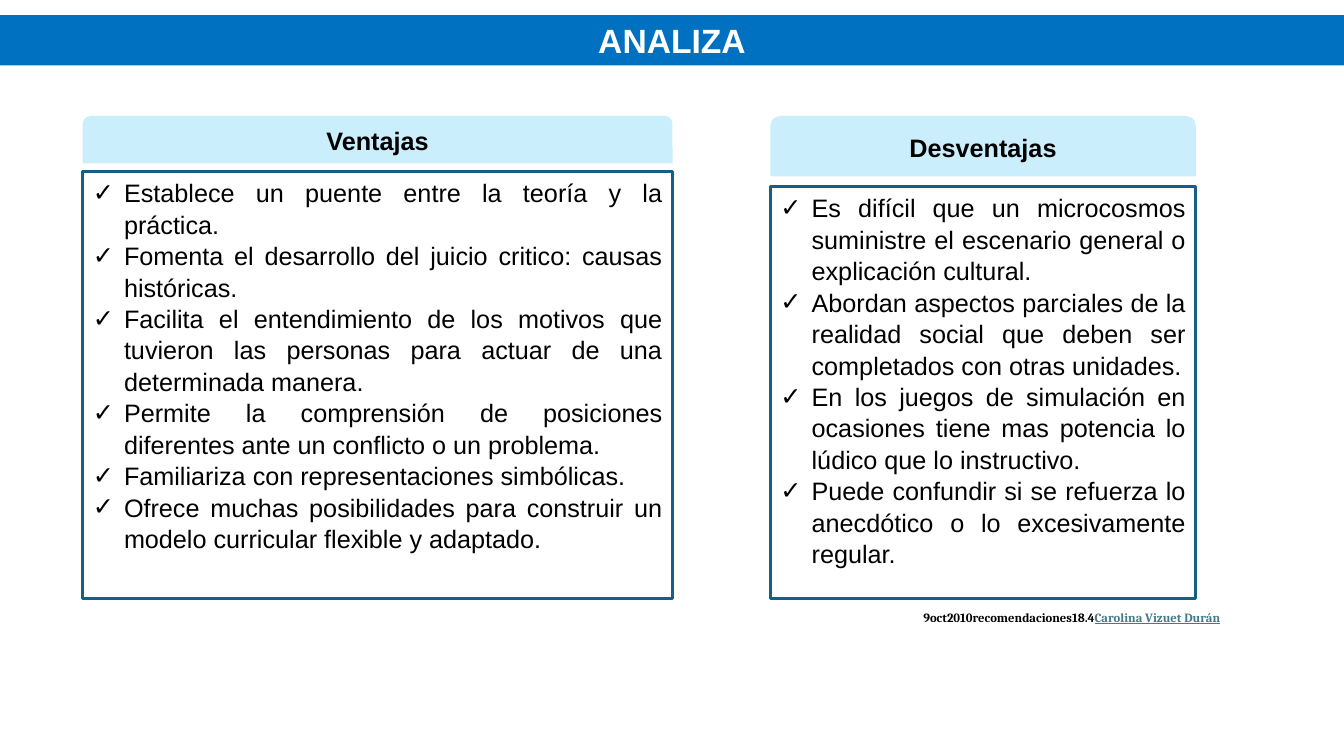
from dataclasses import dataclass

from lxml import etree
from pptx import Presentation
from pptx import util as u
from pptx.dml.color import RGBColor
from pptx.enum import shapes, text
from pptx.oxml.ns import qn


@dataclass(frozen=True)
class Theme:
    banner: RGBColor = RGBColor(0x00, 0x70, 0xC0)
    heading: RGBColor = RGBColor(0xCA, 0xEE, 0xFB)
    border: RGBColor = RGBColor(0x15, 0x60, 0x82)
    link: RGBColor = RGBColor(0x46, 0x78, 0x86)
    ink: RGBColor = RGBColor(0, 0, 0)
    white: RGBColor = RGBColor(0xFF, 0xFF, 0xFF)
    sans: str = "Arial"
    serif: str = "Cambria"
    title_size: float = 24
    body_size: float = 18
    credit_size: float = 9
    border_width: float = 2.25
    line_spacing: float = 1.04


@dataclass(frozen=True)
class Column:
    heading: str
    points: tuple[str, ...]
    left: float
    width: float
    heading_height: float
    list_top: float


THEME = Theme()
HEADING_TOP = 1.15
LIST_BOTTOM = 5.94
INDENT = 0.31

COLUMNS = (
    Column("Ventajas", (
        "Establece un puente entre la teoría y la práctica.",
        "Fomenta el desarrollo del juicio critico: causas históricas.",
        "Facilita el entendimiento de los motivos que tuvieron las personas para actuar de una determinada manera.",
        "Permite la comprensión de posiciones diferentes ante un conflicto o un problema.",
        "Familiariza con representaciones simbólicas.",
        "Ofrece muchas posibilidades para construir un modelo curricular flexible y adaptado.",
    ), 0.82, 5.85, 0.47, 1.7),
    Column("Desventajas", (
        "Es difícil que un microcosmos suministre el escenario general o explicación cultural.",
        "Abordan aspectos parciales de la realidad social que deben ser completados con otras unidades.",
        "En los juegos de simulación en ocasiones tiene mas potencia lo lúdico que lo instructivo.",
        "Puede confundir si se refuerza lo anecdótico o lo excesivamente regular.",
    ), 7.64, 4.22, 0.6, 1.85),
)


def place(part, left: float, top: float, width: float, height: float) -> None:
    part.left, part.top = u.Inches(left), u.Inches(top)
    part.width, part.height = u.Inches(width), u.Inches(height)


def style(font, size: float, color: RGBColor, bold: bool = False, name: str = THEME.sans) -> None:
    font.name, font.size, font.bold = name, u.Pt(size), bold
    font.color.rgb = color


def add_check(paragraph) -> None:
    properties = paragraph._p.get_or_add_pPr()
    properties.set("marL", str(u.Inches(INDENT)))
    properties.set("indent", str(-u.Inches(INDENT)))
    bullet_color = etree.SubElement(properties, qn("a:buClr"))
    etree.SubElement(bullet_color, qn("a:srgbClr"), val=str(THEME.ink))
    etree.SubElement(properties, qn("a:buFont"), typeface=THEME.sans)
    etree.SubElement(properties, qn("a:buChar"), char="✓")


def draw_banner(title) -> None:
    place(title, 0, 0.15, 13.33, 0.5)
    title.fill.solid()
    title.fill.fore_color.rgb = THEME.banner
    title.text_frame.text = "ANALIZA"
    title.text_frame.auto_size = text.MSO_AUTO_SIZE.NONE
    paragraph = title.text_frame.paragraphs[0]
    paragraph.alignment = text.PP_ALIGN.CENTER
    style(paragraph.font, THEME.title_size, THEME.white, bold=True)


def draw_list(body, column: Column) -> None:
    place(body, column.left, column.list_top, column.width, LIST_BOTTOM - column.list_top)
    body.line.color.rgb = THEME.border
    body.line.width = u.Pt(THEME.border_width)
    frame = body.text_frame
    frame.text = "\n".join(column.points)
    frame.auto_size = text.MSO_AUTO_SIZE.NONE
    frame.vertical_anchor = text.MSO_ANCHOR.TOP
    for paragraph in frame.paragraphs:
        paragraph.alignment = text.PP_ALIGN.JUSTIFY
        paragraph.line_spacing = THEME.line_spacing
        paragraph.space_before = paragraph.space_after = u.Pt(0)
        add_check(paragraph)
        style(paragraph.font, THEME.body_size, THEME.ink)


def draw_heading(slide, column: Column) -> None:
    heading = slide.shapes.add_shape(
        shapes.MSO_SHAPE.ROUND_2_SAME_RECTANGLE,
        u.Inches(column.left), u.Inches(HEADING_TOP),
        u.Inches(column.width), u.Inches(column.heading_height))
    heading.shadow.inherit = False
    heading.fill.solid()
    heading.fill.fore_color.rgb = THEME.heading
    heading.line.fill.background()
    heading.text_frame.text = column.heading
    heading.text_frame.vertical_anchor = text.MSO_ANCHOR.MIDDLE
    paragraph = heading.text_frame.paragraphs[0]
    paragraph.alignment = text.PP_ALIGN.CENTER
    style(paragraph.font, THEME.body_size, THEME.ink, bold=True)


def draw_credit(slide) -> None:
    credit = slide.shapes.add_textbox(u.Inches(9.06), u.Inches(6), u.Inches(3.83), u.Inches(0.25))
    credit.text_frame.word_wrap = True
    paragraph = credit.text_frame.paragraphs[0]
    paragraph.space_after = u.Pt(6)
    style(paragraph.font, THEME.credit_size, THEME.ink, bold=True, name=THEME.serif)
    for wording, color, underlined in (
        ("9oct2010recomendaciones18.4", THEME.ink, False),
        ("Carolina Vizuet Durán", THEME.link, True),
    ):
        run = paragraph.add_run()
        run.text = wording
        style(run.font, THEME.credit_size, color, bold=True, name=THEME.serif)
        run.font.underline = underlined


def main() -> None:
    deck = Presentation()
    deck.slide_width, deck.slide_height = u.Inches(13.33), u.Inches(7.5)
    slide = deck.slides.add_slide(deck.slide_layouts.get_by_name("Two Content"))
    title, *bodies = slide.placeholders
    draw_banner(title)
    for body, column in zip(bodies, COLUMNS):
        draw_list(body, column)
        draw_heading(slide, column)
    draw_credit(slide)
    deck.save("out.pptx")


if __name__ == "__main__":
    main()
